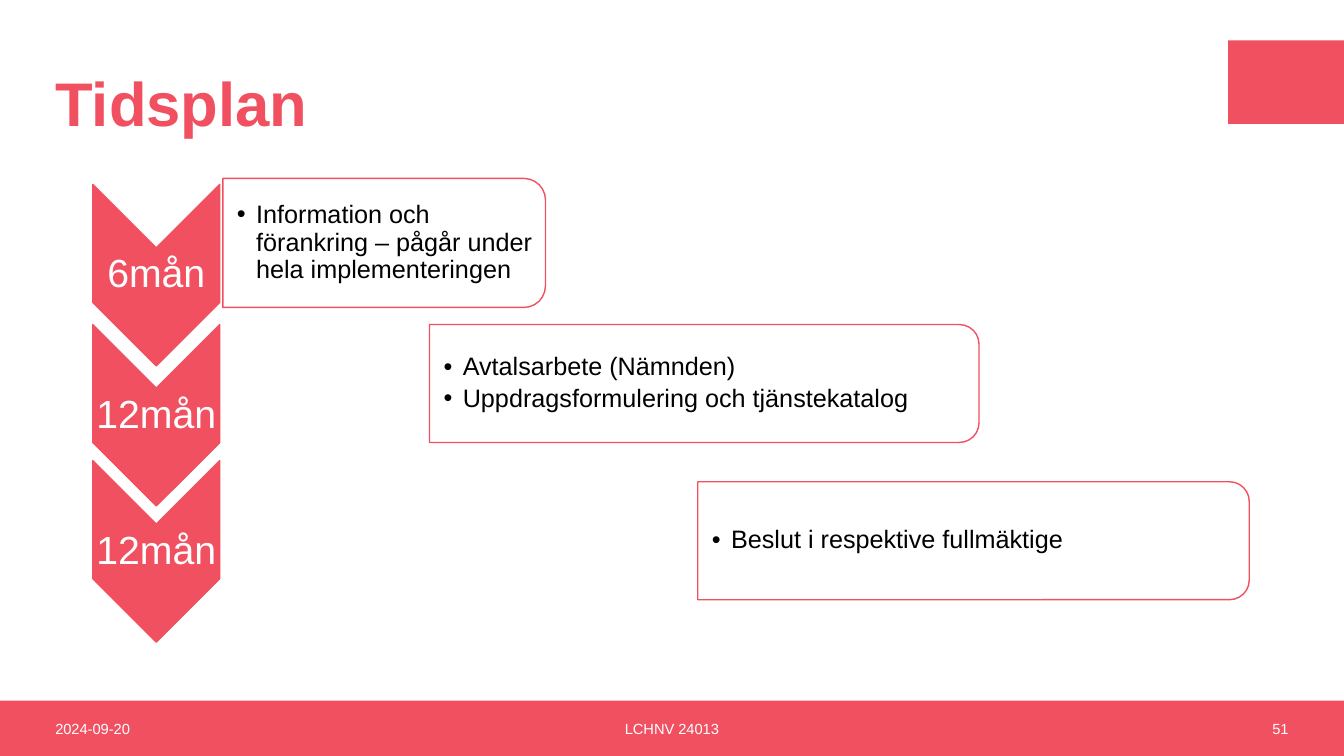
from dataclasses import dataclass

from pptx import Presentation
from pptx.dml.color import RGBColor
from pptx.enum.shapes import MSO_SHAPE
from pptx.enum.text import MSO_ANCHOR, MSO_AUTO_SIZE, PP_ALIGN
from pptx.oxml.ns import qn
from pptx.util import Inches, Pt
from lxml import etree

RECT = MSO_SHAPE.RECTANGLE
CHEVRON = MSO_SHAPE.CHEVRON
ROUND = MSO_SHAPE.ROUND_2_SAME_RECTANGLE
MIDDLE = MSO_ANCHOR.MIDDLE
FIXED = MSO_AUTO_SIZE.NONE
LEFT, CENTER, RIGHT = PP_ALIGN.LEFT, PP_ALIGN.CENTER, PP_ALIGN.RIGHT


@dataclass(frozen=True)
class Theme:
    font: str = "Arial"
    red: RGBColor = RGBColor(0xF1, 0x50, 0x60)
    white: RGBColor = RGBColor(0xFF, 0xFF, 0xFF)
    black: RGBColor = RGBColor(0, 0, 0)
    title: float = 44
    step: float = 28
    body: float = 18
    foot: float = 10.5


THEME = Theme()
EDGE = (0.1, 0.05, 0.1, 0.05)
STEPS = [
    ("6mån", 1.83, (2.21, 1.77, 3.2, 1.28),
     ["Information och förankring – pågår under hela implementeringen"]),
    ("12mån", 3.22, (4.26, 3.22, 5.45, 1.17),
     ["Avtalsarbete (Nämnden)", "Uppdragsformulering och tjänstekatalog"]),
    ("12mån", 4.57, (6.92, 4.78, 5.47, 1.17),
     ["Beslut i respektive fullmäktige"]),
]


def place(shape, box):
    shape.left, shape.top, shape.width, shape.height = map(Inches, box)


def write(shape, text, size, color, align=LEFT, edge=EDGE, lead=0.9, bold=False):
    frame = shape.text_frame
    frame.text = text
    frame.word_wrap = True
    frame.auto_size = FIXED
    frame.vertical_anchor = MIDDLE
    (frame.margin_left, frame.margin_top,
     frame.margin_right, frame.margin_bottom) = map(Inches, edge)
    for para in frame.paragraphs:
        para.alignment = align
        para.line_spacing = lead
        para.space_before = Pt(0)
        for run in para.runs:
            font = run.font
            font.name, font.size, font.bold = THEME.font, Pt(size), bold
            font.color.rgb = color


def label(slide, box, text, size, **style):
    shape = slide.shapes.add_textbox(*map(Inches, box))
    write(shape, text, size, THEME.white, **style)


def block(slide, kind, box, fill, line=False):
    shape = slide.shapes.add_shape(kind, *map(Inches, box))
    shape.shadow.inherit = False
    shape.fill.solid()
    shape.fill.fore_color.rgb = fill
    if line:
        shape.line.color.rgb = THEME.red
        shape.line.width = Pt(1)
    else:
        shape.line.fill.background()
    return shape


def turned(slide, kind, box, fill):
    x, y, w, h = box
    shift = (w - h) / 2
    shape = block(slide, kind, (x + shift, y - shift, h, w), fill, True)
    shape.rotation = 90
    return shape


def bullet(para):
    para.space_after = Pt(3)
    props = para._p.get_or_add_pPr()
    props.set("marL", str(Inches(0.19)))
    props.set("indent", str(-Inches(0.19)))
    etree.SubElement(props, qn("a:buFont")).set("typeface", THEME.font)
    etree.SubElement(props, qn("a:buChar")).set("char", "•")


def step(slide, box, text):
    x, y, w, h = box
    turned(slide, CHEVRON, box, THEME.red)
    label(slide, (x, y + w / 2, w, h - w), text, THEME.step,
          align=CENTER, edge=(0.02,) * 4)


def card(slide, box, body, lines):
    x, y, w, h = box
    panel = turned(slide, ROUND, box, THEME.white)
    tone = panel.fill._xPr.find(".//" + qn("a:srgbClr"))
    etree.SubElement(tone, qn("a:alpha")).set("val", "90000")
    place(body, (x, y + 0.06, w - 0.06, h - 0.12))
    write(body, "\n".join(lines), THEME.body, THEME.black,
          edge=(0.14, 0.01, 0.01, 0.01))
    for para in body.text_frame.paragraphs:
        bullet(para)
    panel._element.addnext(body._element)


def header(slide, box):
    x, y, w, h = box
    block(slide, RECT, (x + w - 1.15, y, 1.15, 0.83), THEME.red)
    title = slide.shapes.title
    place(title, (x + 0.45, y, 11.61, h))
    write(title, "Tidsplan", THEME.title, THEME.red, bold=True)


def plan(slide, box):
    x, y, w, h = box
    bodies = list(slide.placeholders)[1:]
    for (text, top, area, lines), body in zip(STEPS, bodies):
        step(slide, (x, top, w, h), text)
        card(slide, area, body, lines)
    for spare in bodies[len(STEPS):]:
        spare._element.getparent().remove(spare._element)


def footer(slide, box):
    x, y, w, h = box
    block(slide, RECT, box, THEME.red)
    parts = [
        ("2024-09-20", x + 0.45, 3, LEFT),
        ("LCHNV 24013", x + (w - 5.5) / 2, 5.5, CENTER),
        ("51", x + w - 3.45, 3, RIGHT),
    ]
    for text, left, wide, align in parts:
        label(slide, (left, y, wide, h), text, THEME.foot, align=align, lead=1.0)


def main():
    deck = Presentation()
    deck.slide_width, deck.slide_height = Inches(13.33), Inches(7.5)
    slide = deck.slides.add_slide(deck.slide_layouts.get_by_name("Comparison"))
    header(slide, (0, 0.4, 13.33, 1.32))
    plan(slide, (0.92, 1.83, 1.26, 1.8))
    footer(slide, (0, 6.95, 13.33, 0.55))
    deck.save("out.pptx")


if __name__ == "__main__":
    main()
